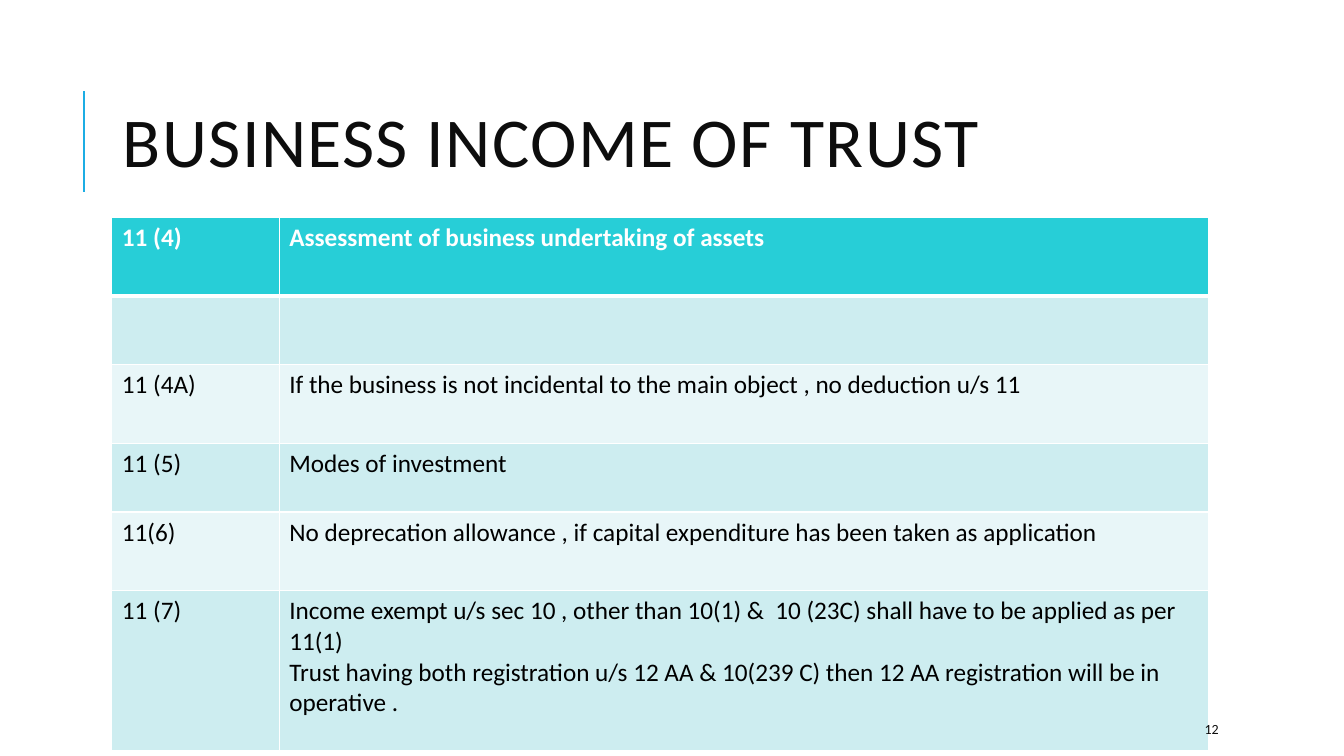
import pptx
import pptx.dml.color
import pptx.enum.shapes
import pptx.enum.text
import pptx.oxml
import pptx.oxml.ns
import pptx.util

PX = 9144  # EMU per px, 100 px to the inch

INK = "0D0D0D"
BLACK = "000000"
WHITE = "FFFFFF"
ACCENT = "1CADE4"
HEADER = "27CED7"
BANDS = ("CDEDF0", "E8F6F8")

COLUMNS = (166, 922)
ROW_HEIGHTS = (78, 68, 78, 68, 78, 159)
SECTIONS = (
    ("11 (4)", "Assessment of business undertaking of assets"),
    ("", ""),
    ("11 (4A)", "If the business is not incidental to the main object , no deduction u/s 11"),
    ("11 (5)", "Modes of investment"),
    ("11(6)", "No deprecation allowance , if capital expenditure has been taken as application"),
    ("11 (7)",
     "Income exempt u/s sec 10 , other than 10(1) &  10 (23C) shall have to be applied as per 11(1)\n"
     "Trust having both registration u/s 12 AA & 10(239 C) then 12 AA registration will be in operative ."),
)


def color(value):
    return pptx.dml.color.RGBColor.from_string(value)


class SlideWriter:
    font_name = "Calibri"

    def __init__(self, page):
        self.page = page

    def style(self, para, size, ink, bold=False):
        para.font.name = self.font_name
        para.font.size = pptx.util.Pt(size)
        para.font.bold = bold
        para.font.color.rgb = color(ink)

    def text(self, words, left, top, width, height, size, line_spacing=1.0, tracking=0):
        box = self.page.shapes.add_textbox(left * PX, top * PX, width * PX, height * PX)
        frame = box.text_frame
        frame.word_wrap = True
        frame.vertical_anchor = pptx.enum.text.MSO_ANCHOR.MIDDLE
        para = frame.paragraphs[0]
        para.line_spacing = line_spacing
        self.style(para, size, INK)
        span = para.add_run()
        span.text = words
        if tracking:
            span.font.size = pptx.util.Pt(size)
            span._r.get_or_add_rPr().set("spc", str(tracking * 100))

    def line(self, x1, y1, x2, y2, ink, weight):
        rule = self.page.shapes.add_connector(
            pptx.enum.shapes.MSO_CONNECTOR.STRAIGHT, x1 * PX, y1 * PX, x2 * PX, y2 * PX)
        rule.line.color.rgb = color(ink)
        rule.line.width = pptx.util.Pt(weight)
        rule._element.spPr.append(pptx.oxml.parse_xml(
            f"<a:effectLst {pptx.oxml.ns.nsdecls('a')}/>"))

    def borders(self, cell, weights):
        properties = cell._tc.get_or_add_tcPr()
        for position, (side, weight) in enumerate(weights.items()):
            properties.insert(position, pptx.oxml.parse_xml(
                f'<a:{side} {pptx.oxml.ns.nsdecls("a")} w="{pptx.util.Pt(weight)}">'
                f'<a:solidFill><a:srgbClr val="{WHITE}"/></a:solidFill></a:{side}>'))

    def table(self, rows, left, top, widths, heights, size):
        frame = self.page.shapes.add_table(
            len(rows), len(widths), left * PX, top * PX, sum(widths) * PX, sum(heights) * PX)
        grid = frame.table
        grid.horz_banding = False
        for column, width in zip(grid.columns, widths):
            column.width = width * PX
        for number, (texts, height) in enumerate(zip(rows, heights)):
            grid.rows[number].height = height * PX
            is_header = number == 0
            for column, words in enumerate(texts):
                cell = grid.cell(number, column)
                cell.text = words
                cell.fill.solid()
                cell.fill.fore_color.rgb = color(HEADER if is_header else BANDS[(number - 1) % 2])
                # The header's rule is shared by the two rows that meet there
                self.borders(cell, {"lnL": 1, "lnR": 1,
                                    "lnT": 3 if number == 1 else 1,
                                    "lnB": 3 if is_header else 1})
                for para in cell.text_frame.paragraphs:
                    self.style(para, size, WHITE if is_header else BLACK, is_header)


def main():
    deck = pptx.Presentation()
    deck.slide_width = 1333 * PX
    deck.slide_height = 750 * PX
    writer = SlideWriter(deck.slides.add_slide(deck.slide_layouts[6]))

    # Title with its accent rule
    writer.line(83, 190, 83, 90, ACCENT, 1.5)
    writer.text("BUSINESS INCOME OF TRUST", 112, 64, 1063, 164, 50, line_spacing=0.8, tracking=1)

    # Sections of the act
    writer.table(SECTIONS, 111, 216, COLUMNS, ROW_HEIGHTS, 18)

    # Page number
    writer.text("12", 1185, 708, 106, 30, 10)

    deck.save("out.pptx")


if __name__ == "__main__":
    main()
